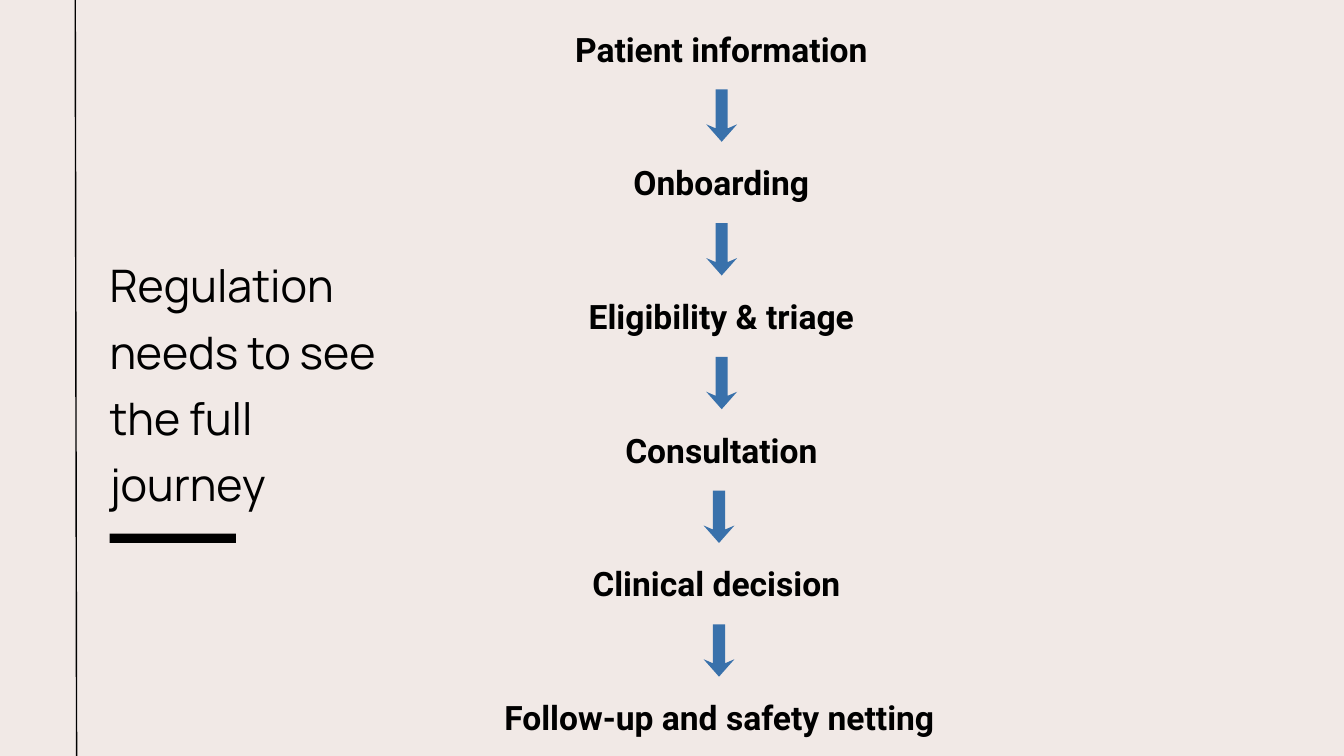
from dataclasses import dataclass

from lxml import etree
from pptx import Presentation
from pptx.dml.color import RGBColor
from pptx.enum.shapes import MSO_CONNECTOR, MSO_SHAPE
from pptx.enum.text import MSO_ANCHOR, MSO_AUTO_SIZE, PP_ALIGN
from pptx.oxml.ns import qn
from pptx.util import Inches, Pt

LEFT, CENTER = PP_ALIGN.LEFT, PP_ALIGN.CENTER
TOP = MSO_ANCHOR.TOP
FIXED = MSO_AUTO_SIZE.NONE
RECT = MSO_SHAPE.RECTANGLE
STRAIGHT = MSO_CONNECTOR.STRAIGHT

BLACK, BLUE, CREAM = "000000", "3971AB", "F1E9E6"
PITCH = 1.99
STEP_TOP, STEP_HIGH = 0.38, 0.61
ARROW_TOP = 1.33
ARROW = [(-0.09, 0.58), (-0.09, 0), (0.09, 0), (0.09, 0.58),
         (0.23, 0.52), (0, 0.78), (-0.23, 0.52)]


@dataclass
class Step:
    text: str
    left: float
    width: float


@dataclass
class Style:
    font: str
    size: float
    line: float
    bold: bool
    align: PP_ALIGN


STEPS = [
    Step("Patient information", 8.26, 4.95),
    Step("Onboarding", 9.27, 2.93),
    Step("Eligibility & triage", 8.26, 4.95),
    Step("Consultation", 8.86, 3.75),
    Step("Clinical decision", 8.26, 4.8),
    Step("Follow-up and safety netting", 7.13, 7.15),
]
ARROW_MIDS = [10.74, 10.74, 10.74, 10.7, 10.7]
HEAD = Style("Manrope", 48, 71.1, False, LEFT)
LABEL = Style("Roboto", 36, 46.3, True, CENTER)


def color(code: str) -> RGBColor:
    return RGBColor.from_string(code)


def paint(shape, code: str) -> None:
    shape.shadow.inherit = False
    shape.fill.solid()
    shape.fill.fore_color.rgb = color(code)
    shape.line.fill.background()


def write(shape, text: str, style: Style) -> None:
    frame = shape.text_frame
    frame.word_wrap = True
    frame.auto_size = FIXED
    frame.vertical_anchor = TOP
    frame.margin_left = frame.margin_right = 0
    frame.margin_top = frame.margin_bottom = 0
    frame.text = text
    para = frame.paragraphs[0]
    para.alignment = style.align
    para.line_spacing = Pt(style.line)
    para.font.name = style.font
    para.font.size = Pt(style.size)
    para.font.bold = style.bold
    para.font.color.rgb = color(BLACK)


def add_title(slide, text: str) -> None:
    title = slide.shapes.title
    title.left, title.top = Inches(1.63), Inches(3.65)
    title.width, title.height = Inches(4.12), Inches(3.97)
    write(title, text, HEAD)


def add_step(slide, step: Step, top: float) -> None:
    box = slide.shapes.add_textbox(
        Inches(step.left), Inches(top), Inches(step.width), Inches(STEP_HIGH))
    write(box, step.text, LABEL)


def add_arrow(slide, mid: float, top: float) -> None:
    points = [(Inches(mid + x), Inches(top + y)) for x, y in ARROW]
    pen = slide.shapes.build_freeform(*points[0])
    pen.add_line_segments(points[1:], close=True)
    paint(pen.convert_to_shape(), BLUE)


def add_rule(slide) -> None:
    line = slide.shapes.add_connector(
        STRAIGHT, Inches(1.14), Inches(11.25), Inches(1.12), 0)
    line.line.color.rgb = color(BLACK)
    line.line.width = Pt(1.5)
    etree.SubElement(line._element.spPr, qn("a:effectLst"))


def main() -> None:
    deck = Presentation()
    deck.slide_width, deck.slide_height = Inches(20), Inches(11.25)
    slide = deck.slides.add_slide(deck.slide_layouts[5])
    slide.background.fill.solid()
    slide.background.fill.fore_color.rgb = color(CREAM)

    bar = slide.shapes.add_shape(
        RECT, Inches(1.63), Inches(7.94), Inches(1.88), Inches(0.14))
    paint(bar, BLACK)
    add_title(slide, "Regulation needs to see the full journey")
    for row, step in enumerate(STEPS):
        add_step(slide, step, STEP_TOP + row * PITCH)
    for row, mid in enumerate(ARROW_MIDS):
        add_arrow(slide, mid, ARROW_TOP + row * PITCH)
    add_rule(slide)
    deck.save("out.pptx")


if __name__ == "__main__":
    main()
